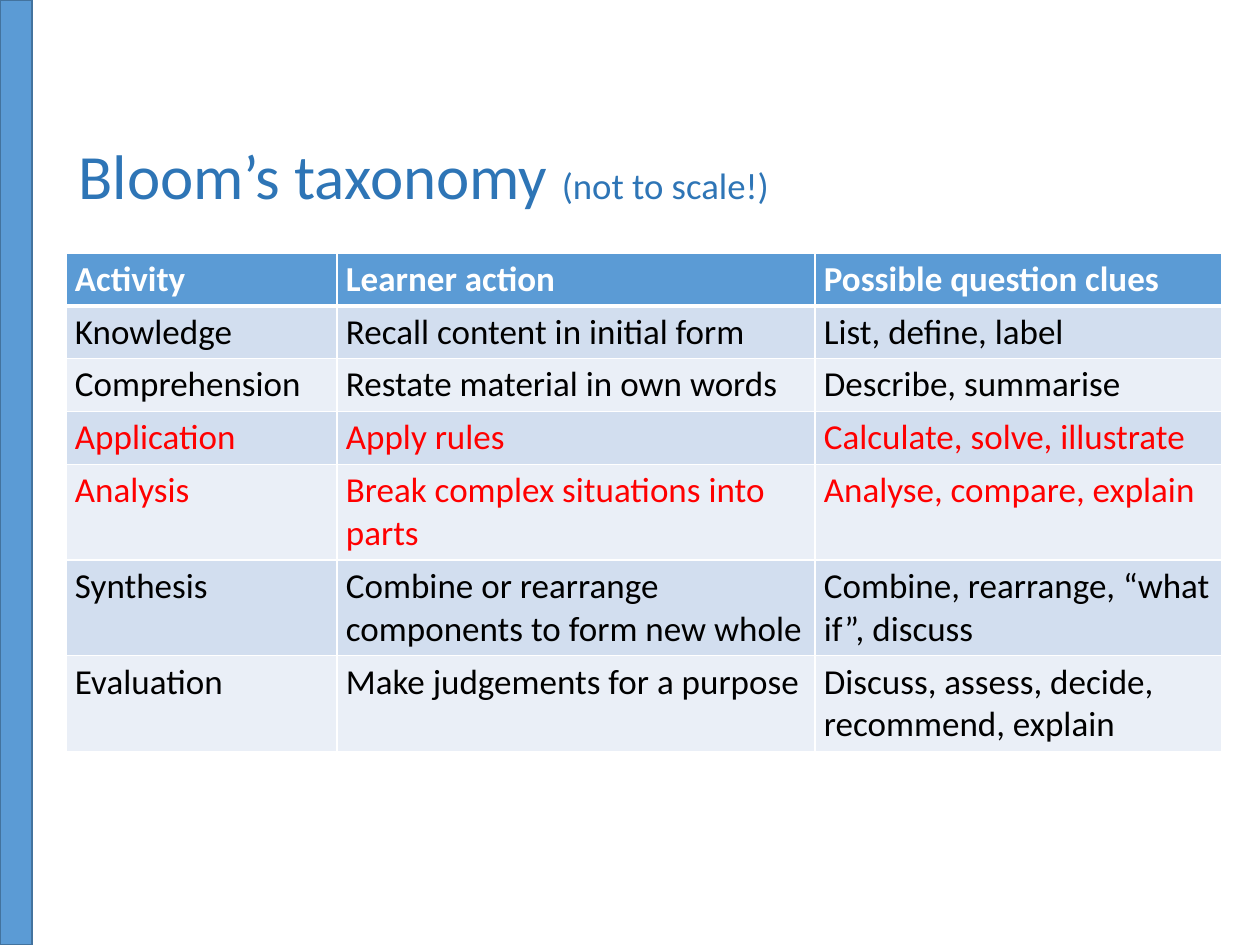
from lxml import etree
from pptx import Presentation
from pptx import util as u
from pptx.dml.color import RGBColor
from pptx.enum import shapes, text
from pptx.oxml.ns import qn

# Content
TITLE, TITLE_NOTE = "Bloom’s taxonomy ", "(not to scale!)"
HEADINGS = ("Activity", "Learner action", "Possible question clues")
LEVELS = [
    ("Knowledge", "Recall content in initial form", "List, define, label"),
    ("Comprehension", "Restate material in own words", "Describe, summarise"),
    ("Application", "Apply rules", "Calculate, solve, illustrate"),
    ("Analysis", "Break complex situations into parts", "Analyse, compare, explain"),
    ("Synthesis", "Combine or rearrange components to form new whole",
     "Combine, rearrange, “what if”, discuss"),
    ("Evaluation", "Make judgements for a purpose",
     "Discuss, assess, decide, recommend, explain"),
]
HIGHLIGHTED = ("Application", "Analysis")

THEME = dict(
    font="Calibri", title_size=36, note_size=21, table_size=20,
    title="2E75B6", accent="5B9BD5", accent_line="43739E",
    bands=("D2DEEF", "EAEFF7"), white="FFFFFF", ink="000000", highlight="FF0000",
)

# Layout in px
PX = u.Inches(1) // 126
SLIDE_W, SLIDE_H = 1260, 945
BAR_W = 32
LEFT = 66
TITLE_BOX = (LEFT, 139, 1101, 81)
TABLE_TOP = 253
COLUMN_WIDTHS = (271, 478, 407)
ROW_HEIGHTS = (48,) * 5 + (86,) * 2
CELL_INSET_X, CELL_INSET_Y = 9, 5


def px(*lengths):
    return [round(length * PX) for length in lengths]


def color(name):
    return RGBColor.from_string(THEME.get(name, name))


def style(font, size, color_name, bold=False):
    font.name, font.size, font.bold = THEME["font"], u.Pt(THEME[size]), bold
    font.color.rgb = color(color_name)


def add_borders(cell, bottom_pt):
    properties = cell._tc.get_or_add_tcPr()
    for index, (side, points) in enumerate(
            (("lnL", 1), ("lnR", 1), ("lnT", 1), ("lnB", bottom_pt))):
        line = etree.Element(qn(f"a:{side}"), w=str(u.Pt(points)))
        fill = etree.SubElement(line, qn("a:solidFill"))
        etree.SubElement(fill, qn("a:srgbClr"), val=THEME["white"])
        properties.insert(index, line)


def add_side_bar(slide):
    bar = slide.shapes.add_shape(
        shapes.MSO_SHAPE.RECTANGLE, *px(0, 0, BAR_W, SLIDE_H))
    bar.shadow.inherit = False
    bar.fill.solid()
    bar.fill.fore_color.rgb = color("accent")
    bar.line.color.rgb = color("accent_line")
    bar.line.width = u.Pt(1)


def add_title(slide):
    title = slide.shapes.title
    title.left, title.top, title.width, title.height = px(*TITLE_BOX)
    title.text_frame.vertical_anchor = text.MSO_ANCHOR.MIDDLE
    heading = title.text_frame.paragraphs[0]
    heading.alignment = text.PP_ALIGN.LEFT
    heading.line_spacing = 0.9
    for words, size in ((TITLE, "title_size"), (TITLE_NOTE, "note_size")):
        run = heading.add_run()
        run.text = words
        style(run.font, size, "title")


def add_taxonomy(slide):
    rows = [HEADINGS, *LEVELS]
    taxonomy = slide.shapes.add_table(
        len(rows), len(HEADINGS),
        *px(LEFT, TABLE_TOP, sum(COLUMN_WIDTHS), sum(ROW_HEIGHTS))).table
    for column, width in zip(taxonomy.columns, px(*COLUMN_WIDTHS)):
        column.width = width
    for row, height in zip(taxonomy.rows, px(*ROW_HEIGHTS)):
        row.height = height

    for r, words in enumerate(rows):
        is_header = r == 0
        if is_header:
            fill, ink = "accent", "white"
        else:
            fill = THEME["bands"][(r - 1) % 2]
            ink = "highlight" if words[0] in HIGHLIGHTED else "ink"
        for c, entry in enumerate(words):
            cell = taxonomy.cell(r, c)
            cell.text = entry
            cell.margin_left, cell.margin_right = px(CELL_INSET_X, CELL_INSET_X)
            cell.margin_top, cell.margin_bottom = px(CELL_INSET_Y, CELL_INSET_Y)
            cell.fill.solid()
            cell.fill.fore_color.rgb = color(fill)
            add_borders(cell, 3 if is_header else 1)
            style(cell.text_frame.paragraphs[0].font, "table_size", ink, is_header)


def main():
    deck = Presentation()
    deck.slide_width, deck.slide_height = px(SLIDE_W, SLIDE_H)
    slide = deck.slides.add_slide(deck.slide_layouts[5])  # Title Only
    add_side_bar(slide)
    add_title(slide)
    add_taxonomy(slide)
    deck.save("out.pptx")


if __name__ == "__main__":
    main()
